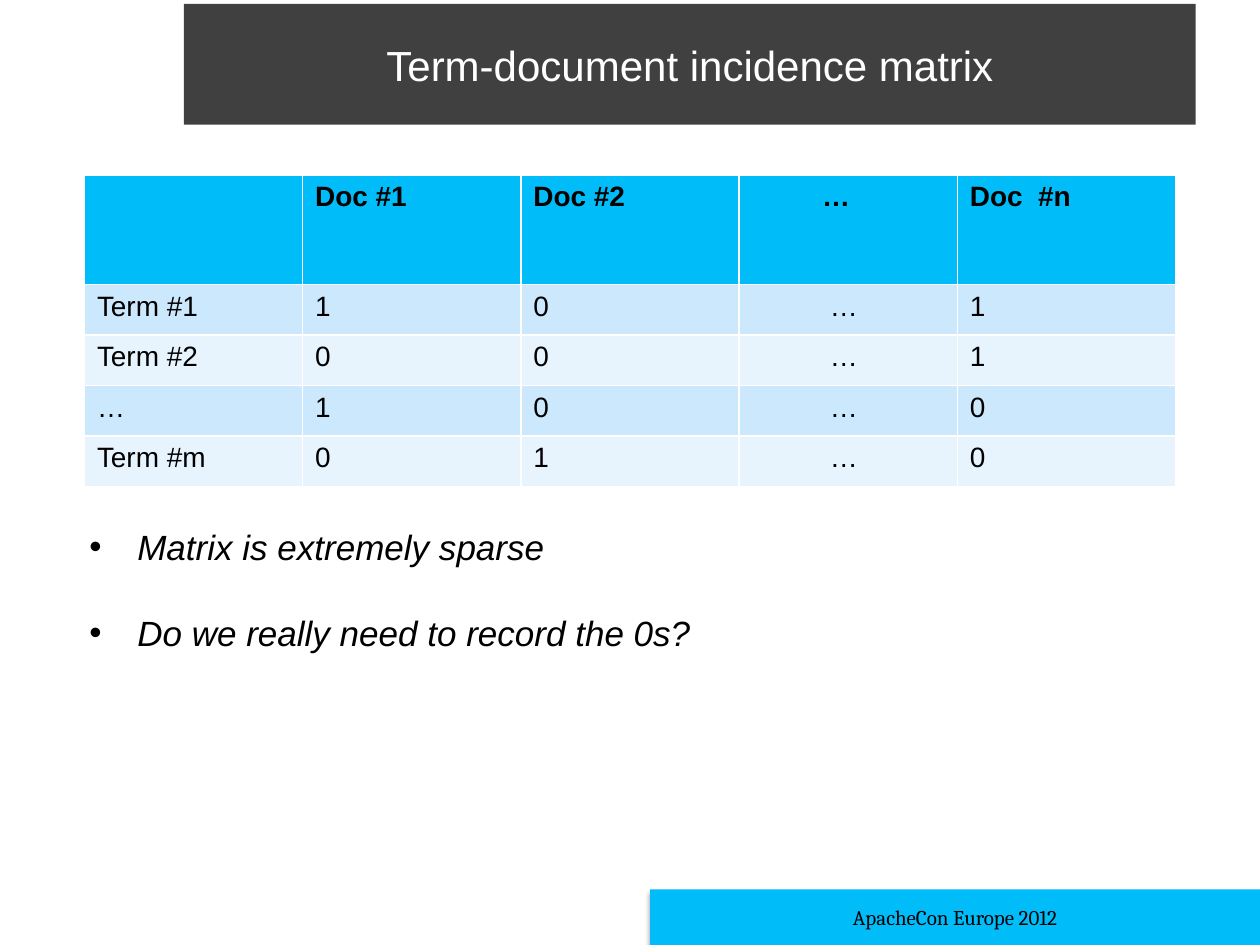
from lxml.etree import SubElement
from pptx import Presentation
from pptx.dml.color import RGBColor
from pptx.enum.shapes import MSO_SHAPE as Shape
from pptx.enum.text import MSO_ANCHOR as Anchor, MSO_AUTO_SIZE as AutoSize, PP_ALIGN as Align
from pptx.oxml.ns import qn
from pptx.util import Inches, Pt


def paint(fill, color):
    fill.solid()
    fill.fore_color.rgb = RGBColor.from_string(color)


def write(paragraph, text, size, color="000000", font="Arial", bold=False, italic=False):
    run = paragraph.add_run()
    run.text = text
    run.font.name = font
    run.font.size = Pt(size)
    run.font.bold = bold
    run.font.italic = italic
    paint(run.font.fill, color)


deck = Presentation()
deck.slide_width, deck.slide_height = Inches(10), Inches(7.5)
slide = deck.slides.add_slide(deck.slide_layouts[1])
heading, remarks = slide.placeholders

heading.left, heading.top = Inches(1.46), Inches(0.03)
heading.width, heading.height = Inches(8.03), Inches(0.96)
paint(heading.fill, "000000")
heading_color = heading.fill._xPr.find(qn("a:solidFill"))[0]
SubElement(heading_color, qn("a:alpha"), val="75000")
heading.text_frame.auto_size = AutoSize.NONE
heading.text_frame.vertical_anchor = Anchor.MIDDLE
heading_line = heading.text_frame.paragraphs[0]
heading_line.alignment = Align.CENTER
write(heading_line, "Term-document incidence matrix", 24, "FFFFFF")

remarks.left, remarks.top = Inches(0.51), Inches(4.14)
remarks.width, remarks.height = Inches(8.82), Inches(2.2)
remarks_text = remarks.text_frame
remarks_text.auto_size = AutoSize.NONE
remarks_text.vertical_anchor = Anchor.TOP
remarks_text.margin_left, remarks_text.margin_top = Inches(0.2), Inches(0.03)
for i, remark in enumerate(["Matrix is extremely sparse", "Do we really need to record the 0s?"]):
    line = remarks_text.add_paragraph() if i else remarks_text.paragraphs[0]
    indent = line._p.get_or_add_pPr()
    indent.set("marL", str(Inches(0.38)))
    indent.set("indent", str(Inches(-0.38)))
    SubElement(indent, qn("a:buFont"), typeface="Arial")
    SubElement(indent, qn("a:buChar"), char="•")
    line.space_before = Pt(25 * i)
    write(line, remark, 20, italic=True)

event = slide.shapes.add_shape(
    Shape.RECTANGLE, Inches(5.16), Inches(7.06), Inches(4.84), Inches(0.44))
event.shadow.inherit = False
paint(event.fill, "00BDFA")
event.line.fill.background()
shadow = SubElement(event._element.spPr.find(qn("a:effectLst")), qn("a:outerShdw"),
                    blurRad=str(Pt(3)), dist=str(Pt(2)), dir="5400000", rotWithShape="0")
shadow_color = SubElement(shadow, qn("a:srgbClr"), val="000000")
SubElement(shadow_color, qn("a:alpha"), val="40000")
event.text_frame.word_wrap = True
event.text_frame.vertical_anchor = Anchor.BOTTOM
event.text_frame.margin_bottom = Inches(0.12)
event_line = event.text_frame.paragraphs[0]
event_line.alignment = Align.CENTER
write(event_line, "ApacheCon Europe 2012", 12, font="Cambria")

incidence = [
    ["", "Doc #1", "Doc #2", "…", "Doc  #n"],
    ["Term #1", "1", "0", "…", "1"],
    ["Term #2", "0", "0", "…", "1"],
    ["…", "1", "0", "…", "0"],
    ["Term #m", "0", "1", "…", "0"],
]
matrix = slide.shapes.add_table(
    5, 5, Inches(0.67), Inches(1.39), Inches(8.66), Inches(2.47)).table
for r, values in enumerate(incidence):
    matrix.rows[r].height = Inches(0.4 if r else 0.87)
    for c, value in enumerate(values):
        cell = matrix.cell(r, c)
        paint(cell.fill, "00BDFA" if r == 0 else "CCE8FD" if r % 2 else "E7F4FE")
        if c == 3:
            cell.margin_left = Inches(0.72 if r else 0.66)
        if value:
            write(cell.text_frame.paragraphs[0], value, 16, bold=r == 0)

deck.save("out.pptx")
